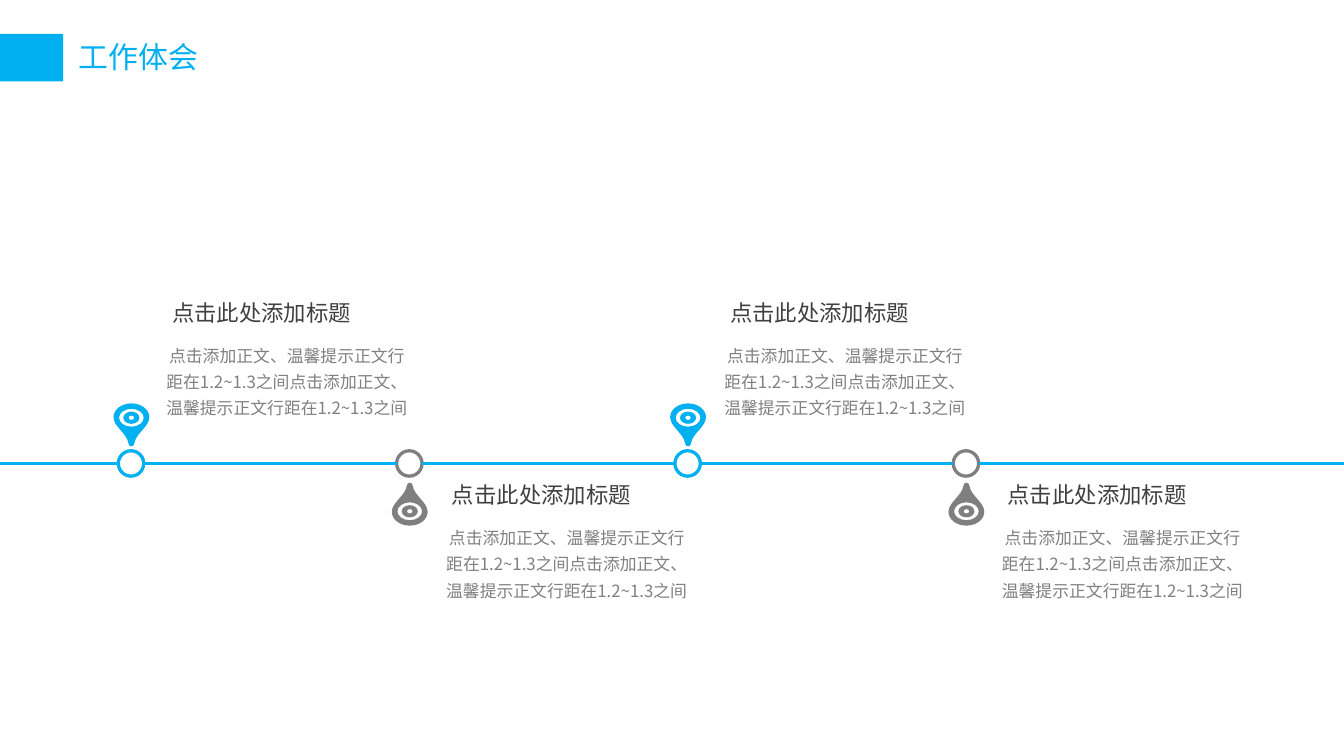
from dataclasses import dataclass

from lxml import etree
from pptx import Presentation
from pptx.dml.color import RGBColor
from pptx.enum.shapes import MSO_CONNECTOR, MSO_SHAPE
from pptx.enum.text import MSO_AUTO_SIZE, PP_ALIGN
from pptx.oxml.ns import qn
from pptx.shapes.autoshape import Shape
from pptx.slide import Slide
from pptx.text.text import _Paragraph
from pptx.util import Pt

STRAIGHT = MSO_CONNECTOR.STRAIGHT
RECTANGLE, OVAL = MSO_SHAPE.RECTANGLE, MSO_SHAPE.OVAL
GROW = MSO_AUTO_SIZE.SHAPE_TO_FIT_TEXT
CENTER = PP_ALIGN.CENTER

COLORS = {"blue": "00B0F0", "gray": "7F7F7F", "title": "404040", "body": "808080"}
FONT = "Noto Sans CJK SC"
SLIDE_WIDTH, SLIDE_HEIGHT = 720, 405
AXIS_Y, AXIS_WEIGHT = 248.3, 1.75
FIRST_CENTER, PITCH, NODE_SIZE = 70.2, 149.1, 13.6
PIN_LEFT_HALF = (
    (0, 0), (-5.3, 0), (-9.6, 3.3), (-9.6, 7.4),
    (-9.6, 12.5), (-2.3, 16.1), (-1.6, 21.4),
    (-1.6, 22.3), (-0.9, 23), (0, 23),
)
PIN_RINGS = ((6.6, 4.8), (4.3, 3.25), (1.5, 1.2))
PIN_EYE_Y = 7.7
ARC = 0.55
UNIT_CIRCLE = (
    (1, 0), (1, ARC), (ARC, 1), (0, 1), (-ARC, 1), (-1, ARC), (-1, 0),
    (-1, -ARC), (-ARC, -1), (0, -1), (ARC, -1), (1, -ARC), (1, 0),
)
TITLE = "点击此处添加标题"
BODY = "点击添加正文、温馨提示正文行距在1.2~1.3之间" * 2


@dataclass(frozen=True)
class Side:
    color: str
    pin_top: float
    pin_rotation: int
    title_top: float


@dataclass(frozen=True)
class Milestone:
    side: Side
    text_left: float


ABOVE = Side("blue", 216.1, 0, 157.6)
BELOW = Side("gray", 258.6, 180, 255.1)
MILESTONES = (
    Milestone(ABOVE, 82.3),
    Milestone(BELOW, 232.2),
    Milestone(ABOVE, 381.2),
    Milestone(BELOW, 529.9),
)


def rgb(color: str) -> RGBColor:
    return RGBColor.from_string(COLORS[color])


def fill_plain(shape: Shape, color: str) -> None:
    shape.fill.solid()
    shape.fill.fore_color.rgb = rgb(color)
    shape.line.fill.background()
    shape.shadow.inherit = False


def add_text(slide: Slide, text: str, left: float, top: float, width: float,
             height: float, size: float, color: str, wrap: bool = True) -> _Paragraph:
    box = slide.shapes.add_textbox(Pt(left), Pt(top), Pt(width), Pt(height))
    frame = box.text_frame
    frame.word_wrap = wrap
    frame.auto_size = GROW
    frame.margin_left = frame.margin_right = Pt(5.4)
    frame.margin_top = frame.margin_bottom = Pt(2.7)
    paragraph = frame.paragraphs[0]
    paragraph.text = text
    paragraph.font.size = Pt(size)
    paragraph.font.color.rgb = rgb(color)
    paragraph.font.name = FONT
    defaults = paragraph._p.pPr.find(qn("a:defRPr"))
    etree.SubElement(defaults, qn("a:ea")).set("typeface", FONT)
    return paragraph


def curve_segments(shape: Shape) -> None:
    lines = list(shape._element.iter(qn("a:lnTo")))
    for first, second, third in zip(lines[::3], lines[1::3], lines[2::3]):
        curve = etree.Element(qn("a:cubicBezTo"))
        first.addprevious(curve)
        for line in (first, second, third):
            curve.append(line[0])
            line.getparent().remove(line)


def add_pin(slide: Slide, center: float, side: Side) -> None:
    right_half = [(-x, y) for x, y in PIN_LEFT_HALF[-2::-1]]
    contours = [[*PIN_LEFT_HALF, *right_half]]
    contours += [[(rx * x, PIN_EYE_Y + ry * y) for x, y in UNIT_CIRCLE]
                 for rx, ry in PIN_RINGS]
    placed = [[(Pt(center + x), Pt(side.pin_top + y)) for x, y in contour]
              for contour in contours]
    builder = slide.shapes.build_freeform(*placed[0][0])
    builder.add_line_segments(placed[0][1:], close=True)
    for ring in placed[1:]:
        builder.move_to(*ring[0])
        builder.add_line_segments(ring[1:], close=True)
    pin = builder.convert_to_shape()
    curve_segments(pin)
    pin.rotation = side.pin_rotation
    fill_plain(pin, side.color)


def add_node(slide: Slide, center: float, color: str) -> None:
    radius = NODE_SIZE / 2
    node = slide.shapes.add_shape(OVAL, Pt(center - radius), Pt(AXIS_Y - radius),
                                  Pt(NODE_SIZE), Pt(NODE_SIZE))
    node.fill.background()
    node.line.color.rgb = rgb(color)
    node.line.width = Pt(AXIS_WEIGHT)
    node.shadow.inherit = False


def add_axis_segment(slide: Slide, start: float, end: float) -> None:
    segment = slide.shapes.add_connector(STRAIGHT, Pt(start), Pt(AXIS_Y), Pt(end), Pt(AXIS_Y))
    segment.line.color.rgb = rgb("blue")
    segment.line.width = Pt(AXIS_WEIGHT)
    etree.SubElement(segment._element.spPr, qn("a:effectLst"))


def add_caption(slide: Slide, milestone: Milestone) -> None:
    top, left = milestone.side.title_top, milestone.text_left
    body = add_text(slide, BODY, left, top + 21.7, 142.6, 48.2, 9, "body")
    body.alignment = CENTER
    body.line_spacing = 1.3
    add_text(slide, TITLE, left + 4.5, top, 108, 20.2, 12, "title", wrap=False)


def main() -> None:
    """Build the work reflections timeline slide."""
    deck = Presentation()
    deck.slide_width, deck.slide_height = Pt(SLIDE_WIDTH), Pt(SLIDE_HEIGHT)
    slide = deck.slides.add_slide(deck.slide_layouts[6])

    add_text(slide, "工作体会", 36.9, 18, 144.7, 25.2, 16, "blue")
    accent = slide.shapes.add_shape(RECTANGLE, Pt(0), Pt(18.2), Pt(33.9), Pt(25.4))
    fill_plain(accent, "blue")

    centers = [FIRST_CENTER + PITCH * index for index in range(len(MILESTONES))]
    for milestone, center in zip(MILESTONES, centers):
        add_pin(slide, center + 0.2, milestone.side)
        add_node(slide, center, milestone.side.color)

    radius = NODE_SIZE / 2
    starts = [0, *(center + radius for center in centers)]
    ends = [*(center - radius for center in centers), SLIDE_WIDTH]
    for start, end in zip(starts, ends):
        add_axis_segment(slide, start, end)
    for milestone in MILESTONES:
        add_caption(slide, milestone)

    deck.save("out.pptx")


if __name__ == "__main__":
    main()
